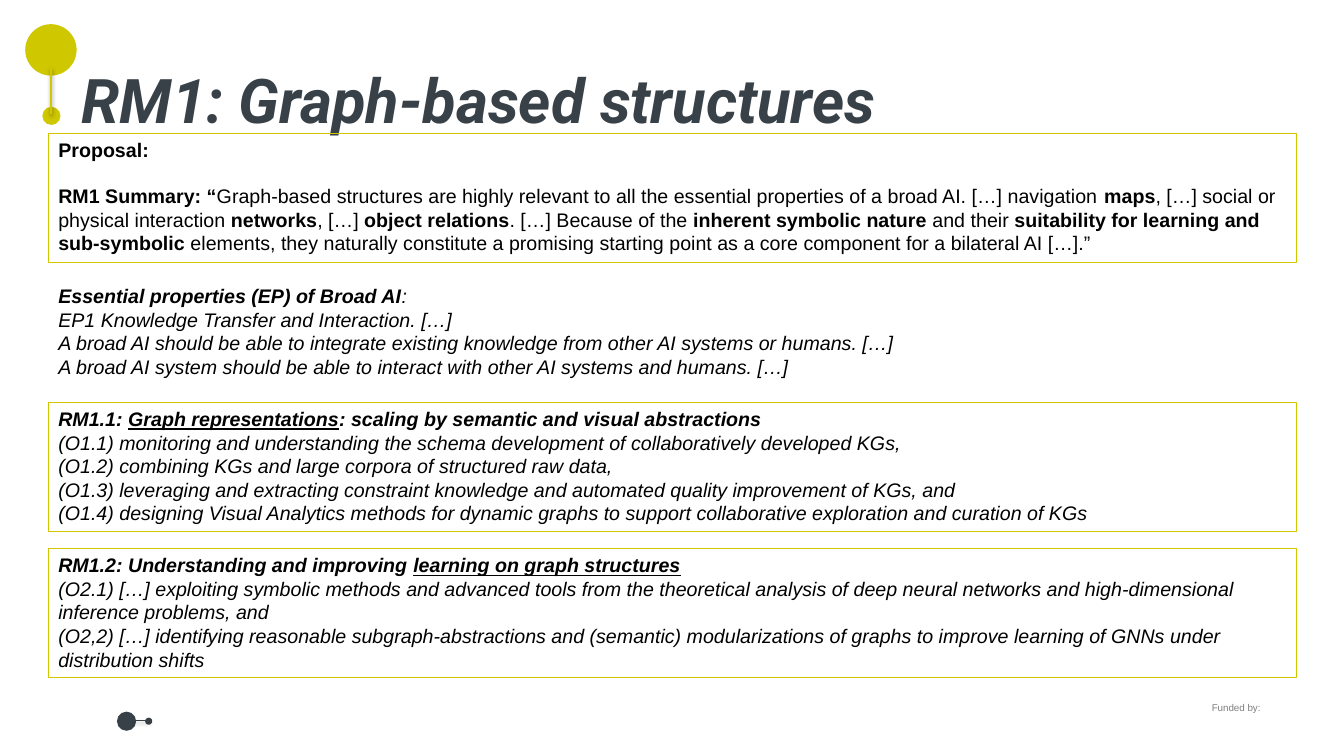
from lxml import etree
from pptx import Presentation
from pptx import util as u
from pptx.dml.color import RGBColor
from pptx.enum import shapes, text
from pptx.oxml import parse_xml

PX = 9144  # EMU per px, 100 px to the inch
SLATE, LIME, BLACK, GREY = "384147", "CFC700", "000000", "7F7F7F"
SHADOW = (
    '<a:effectLst xmlns:a="http://schemas.openxmlformats.org/drawingml/2006/main">'
    '<a:outerShdw blurRad="39370" dist="20320" dir="5400000" rotWithShape="0">'
    '<a:srgbClr val="000000"><a:alpha val="38000"/></a:srgbClr>'
    '</a:outerShdw></a:effectLst>'
)


def rgb(value):
    return RGBColor.from_string(value)


def add_spans(para, spans, size, color, font="Arial"):
    """Add (text, style) runs; style letters are b, i and u."""
    for words, style in spans:
        span = para.add_run()
        span.text = words
        span.font.name = font
        span.font.size = u.Pt(size)
        span.font.color.rgb = rgb(color)
        span.font.bold = "b" in style
        span.font.italic = "i" in style
        span.font.underline = "u" in style


deck = Presentation()
deck.slide_width, deck.slide_height = 1333 * PX, 750 * PX
page = deck.slides.add_slide(deck.slide_layouts[5])

# Ornaments: a line with a dot at each end
lines = [
    (132, 715, 149, 715, SLATE, 0.75),
    (51, 67, 51, 113, LIME, 1.5),
]
dots = [
    (144, 712, 7, SLATE),
    (116, 706, 19, SLATE),
    (42, 106, 18, LIME),
    (25, 24, 51, LIME),
]
for left, top, size, color in dots:
    dot = page.shapes.add_shape(
        shapes.MSO_SHAPE.OVAL, left * PX, top * PX, size * PX, size * PX)
    dot.shadow.inherit = False
    dot.fill.solid()
    dot.fill.fore_color.rgb = rgb(color)
    dot.line.fill.background()
for x1, y1, x2, y2, color, width in lines:
    line = page.shapes.add_connector(
        shapes.MSO_CONNECTOR.STRAIGHT, x1 * PX, y1 * PX, x2 * PX, y2 * PX)
    line.line.color.rgb = rgb(color)
    line.line.width = u.Pt(width)
    line._element.spPr.append(parse_xml(SHADOW))

# Funding label
label = page.shapes.add_textbox(1192 * PX, 691 * PX, 91 * PX, 21 * PX)
label.text_frame.word_wrap = True
add_spans(label.text_frame.paragraphs[0], [("Funded by:", "")], 7, GREY)

# Title
title = page.shapes.title
title.left, title.top, title.width, title.height = 71 * PX, 63 * PX, 1134 * PX, 79 * PX
title.text_frame.word_wrap = True
title.text_frame.auto_size = text.MSO_AUTO_SIZE.NONE
title.text_frame.vertical_anchor = text.MSO_ANCHOR.MIDDLE
para = title.text_frame.paragraphs[0]
para.alignment = text.PP_ALIGN.LEFT
para.line_spacing = 0.9
add_spans(para, [("RM1: Graph-based structures", "bi")], 44, SLATE, "Roboto")

# Content boxes: top, height, framed, gap between paragraphs in pt, paragraphs
sections = [
    (132, 128, True, 16, [
        [("Proposal:", "b")],
        [("RM1 Summary: “", "b"),
         ("Graph-based structures are highly relevant to all the essential properties "
          "of a broad AI. […] navigation ", ""),
         ("maps", "b"),
         (", […] social or physical interaction ", ""),
         ("networks", "b"),
         (", […] ", ""),
         ("object relations", "b"),
         (". […] Because of the ", ""),
         ("inherent symbolic nature ", "b"),
         ("and their ", ""),
         ("suitability for learning and sub-symbolic ", "b"),
         ("elements, they naturally constitute a promising starting point as a core "
          "component for a bilateral AI […].”", "")],
    ]),
    (277, 104, False, 0, [
        [("Essential properties (EP) of Broad AI", "bi"), (":", "i")],
        [("EP1 Knowledge Transfer and Interaction. […]", "i")],
        [("A broad AI should be able to integrate existing knowledge from other "
          "AI systems or humans. […]", "i")],
        [("A broad AI system should be able to interact with other AI systems "
          "and humans. […]", "i")],
    ]),
    (399, 128, True, 0, [
        [("RM1.1: ", "bi"), ("Graph representations", "biu"),
         (": scaling by semantic and visual abstractions", "bi")],
        [("(O1.1) monitoring and understanding the schema development of "
          "collaboratively developed KGs,", "i")],
        [("(O1.2) combining KGs and large corpora of structured raw data,", "i")],
        [("(O1.3) leveraging and extracting constraint knowledge and automated "
          "quality improvement of KGs, and", "i")],
        [("(O1.4) designing Visual Analytics methods for dynamic graphs to support "
          "collaborative exploration and curation of KGs", "i")],
    ]),
    (544, 128, True, 0, [
        [("RM1.2: Understanding and improving ", "bi"),
         ("learning on graph structures", "biu")],
        [("(O2.1) […] exploiting symbolic methods and advanced tools from the theoretical "
          "analysis of deep neural networks and high-dimensional inference problems, and", "i")],
        [("(O2,2) […] identifying reasonable subgraph-abstractions and (semantic) "
          "modularizations of graphs to improve learning of GNNs under distribution shifts", "i")],
    ]),
]
for top, height, framed, gap, paragraphs in sections:
    box = page.shapes.add_textbox(48 * PX, top * PX, 1238 * PX, height * PX)
    if framed:
        box.line.color.rgb = rgb(LIME)
        box.line.width = u.Pt(0.75)
    frame = box.text_frame
    frame.word_wrap = True
    for number, spans in enumerate(paragraphs):
        para = frame.add_paragraph() if number else frame.paragraphs[0]
        if number and gap:
            para.space_before = u.Pt(gap)
        add_spans(para, spans, 14, BLACK)

deck.save("out.pptx")
